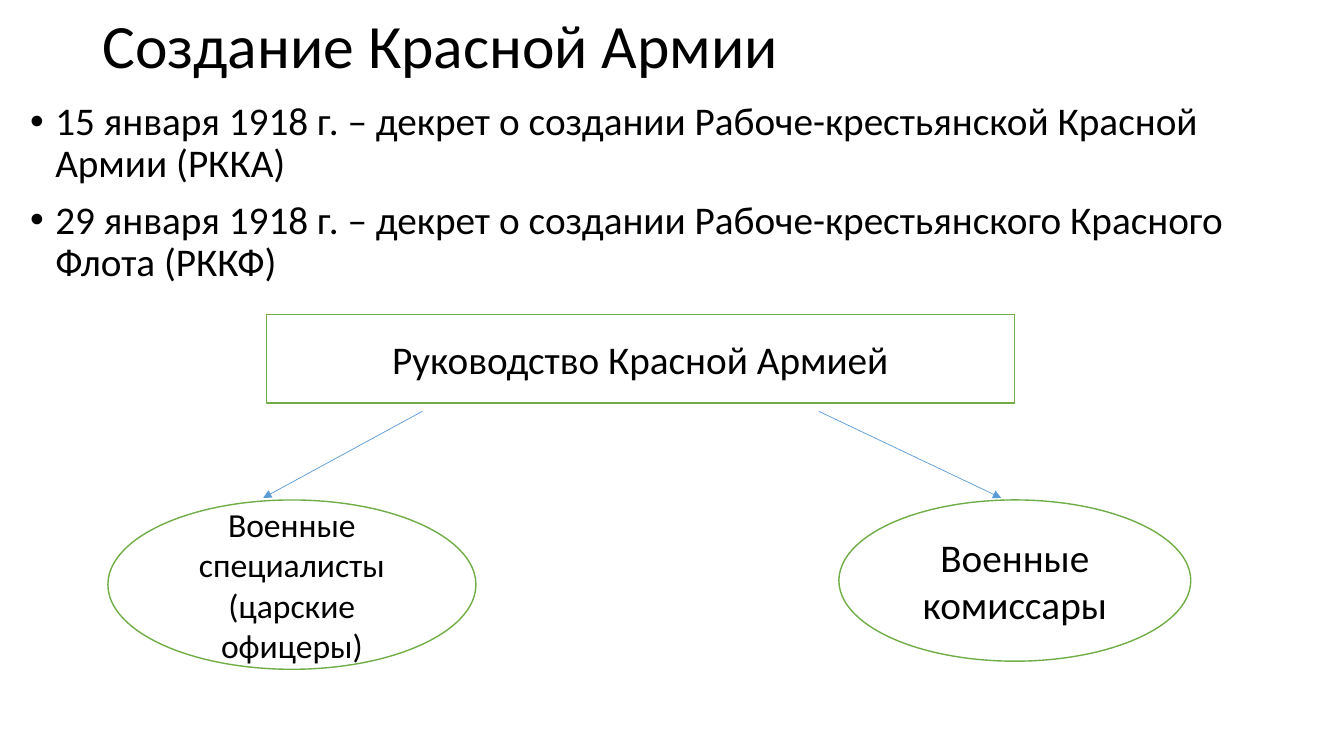
from dataclasses import dataclass

import pptx
import pptx.dml.color
import pptx.enum.shapes
import pptx.enum.text
import pptx.oxml
import pptx.oxml.ns
import pptx.util
from pptx.util import Inches

ALIGN = pptx.enum.text.PP_ALIGN
ANCHOR = pptx.enum.text.MSO_ANCHOR
SHAPE = pptx.enum.shapes.MSO_SHAPE


@dataclass(frozen=True)
class Theme:
    font: str = "Calibri"
    ink: str = "000000"
    paper: str = "FFFFFF"
    outline: str = "70AD47"
    arrow: str = "5B9BD5"
    title_size: int = 44
    text_size: int = 28
    small_size: int = 24


THEME = Theme()


def rgb(code):
    return pptx.dml.color.RGBColor.from_string(code)


def append_xml(parent, tag, attributes=""):
    namespace = pptx.oxml.ns.nsdecls("a")
    parent.append(pptx.oxml.parse_xml(f"<a:{tag} {namespace} {attributes}/>"))


def write_text(frame, paragraphs, size=THEME.text_size, align=ALIGN.LEFT,
               anchor=ANCHOR.TOP, line_spacing=None, space_before=0, bullet=False):
    """Fill a text frame with one paragraph for each string."""
    frame.word_wrap = True
    frame.vertical_anchor = anchor
    for index, text in enumerate(paragraphs):
        paragraph = frame.add_paragraph() if index else frame.paragraphs[0]
        paragraph.alignment = align
        paragraph.line_spacing = line_spacing
        paragraph.space_before = pptx.util.Pt(space_before)
        if bullet:
            properties = paragraph._p.get_or_add_pPr()
            properties.set("marL", str(Inches(0.25)))
            properties.set("indent", str(Inches(-0.25)))
            append_xml(properties, "buFont", 'typeface="Arial"')
            append_xml(properties, "buChar", 'char="•"')
        run = paragraph.add_run()
        run.text = text
        run.font.name = THEME.font
        run.font.size = pptx.util.Pt(size)
        run.font.color.rgb = rgb(THEME.ink)


def add_text(slide, box, paragraphs, **text_format):
    area = slide.shapes.add_textbox(*map(Inches, box))
    write_text(area.text_frame, paragraphs, **text_format)


def add_node(slide, kind, box, paragraphs, size=THEME.text_size):
    node = slide.shapes.add_shape(kind, *map(Inches, box))
    node.shadow.inherit = False
    node.fill.solid()
    node.fill.fore_color.rgb = rgb(THEME.paper)
    node.line.color.rgb = rgb(THEME.outline)
    node.line.width = pptx.util.Pt(1)
    write_text(node.text_frame, paragraphs, size=size,
               align=ALIGN.CENTER, anchor=ANCHOR.MIDDLE)


def add_arrow(slide, start, end):
    arrow = slide.shapes.add_connector(
        pptx.enum.shapes.MSO_CONNECTOR.STRAIGHT, *map(Inches, start + end))
    arrow.line.color.rgb = rgb(THEME.arrow)
    arrow.line.width = pptx.util.Pt(0.5)
    append_xml(arrow.line._get_or_add_ln(), "tailEnd", 'type="triangle"')
    append_xml(arrow._element.spPr, "effectLst")


def main():
    deck = pptx.Presentation()
    deck.slide_width, deck.slide_height = Inches(13.33), Inches(7.5)
    slide = deck.slides.add_slide(deck.slide_layouts[6])

    # Heading and decrees
    add_text(slide, (0.92, 0, 11.5, 0.96), ["Создание Красной Армии"],
             size=THEME.title_size, anchor=ANCHOR.MIDDLE, line_spacing=0.9)
    add_text(slide, (0.2, 0.96, 12.96, 2.16), [
        "15 января 1918 г. – декрет о создании Рабоче-крестьянской Красной Армии (РККА)",
        "29 января 1918 г. – декрет о создании Рабоче-крестьянского Красного Флота (РККФ)",
    ], line_spacing=0.9, space_before=10, bullet=True)

    # Army leadership and its two branches
    add_node(slide, SHAPE.RECTANGLE, (2.64, 3.12, 7.42, 0.88),
             ["Руководство Красной Армией"])
    arrow_top, arrow_bottom = 4.08, 4.94
    for start_x, end_x in ((4.19, 2.61), (8.12, 9.93)):
        add_arrow(slide, (start_x, arrow_top), (end_x, arrow_bottom))
    add_node(slide, SHAPE.OVAL, (1.07, 4.96, 3.65, 1.68),
             ["Военные специалисты", "(царские офицеры)"], size=THEME.small_size)
    add_node(slide, SHAPE.OVAL, (8.32, 4.96, 3.49, 1.6), ["Военные комиссары"])

    deck.save("out.pptx")


if __name__ == "__main__":
    main()
